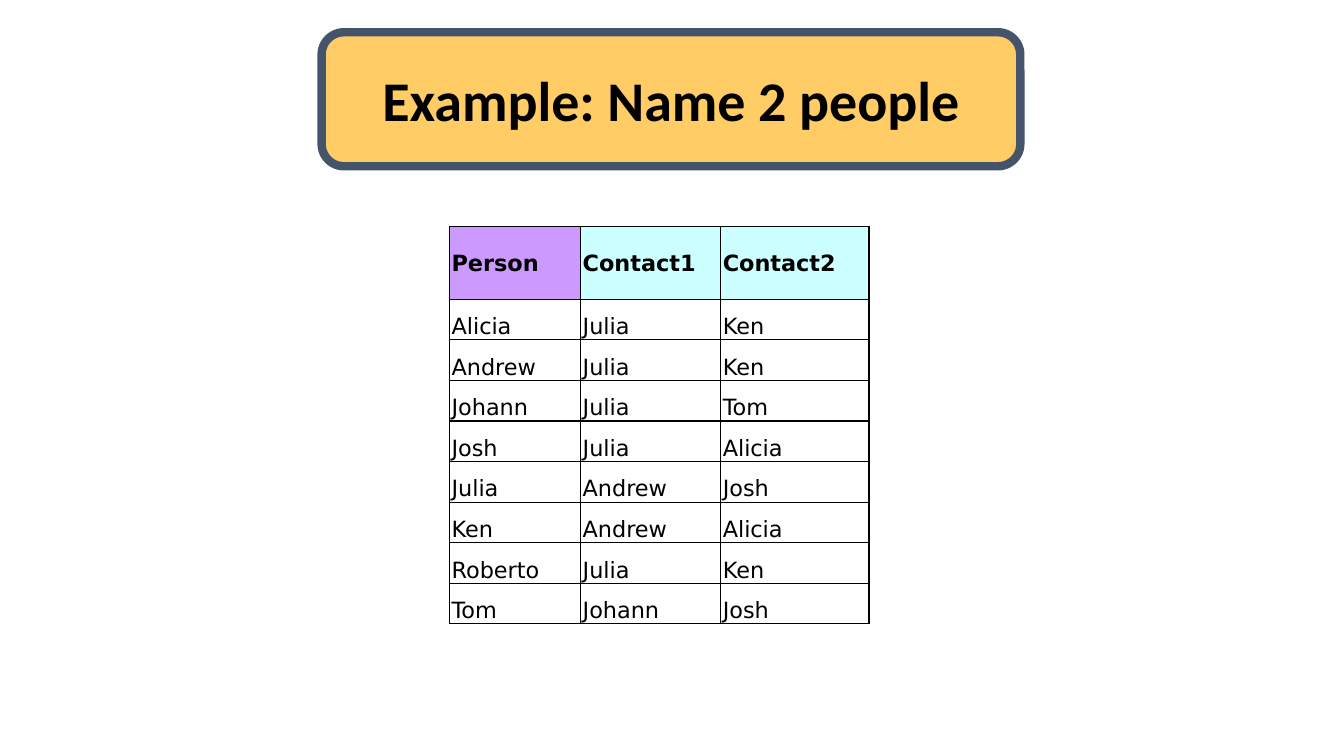
from lxml import etree
from pptx import Presentation
from pptx.dml.color import RGBColor
from pptx.enum import shapes, text
from pptx.oxml import ns
from pptx.util import Inches, Pt

HEADERS = ["Person", "Contact1", "Contact2"]
HEADER_FILLS = ["CC99FF", "CCFFFF", "CCFFFF"]
CONTACTS = [
    ["Alicia", "Julia", "Ken"],
    ["Andrew", "Julia", "Ken"],
    ["Johann", "Julia", "Tom"],
    ["Josh", "Julia", "Alicia"],
    ["Julia", "Andrew", "Josh"],
    ["Ken", "Andrew", "Alicia"],
    ["Roberto", "Julia", "Ken"],
    ["Tom", "Johann", "Josh"],
]
COLUMN_WIDTHS = [1.3, 1.39, 1.47]
TABLE_HEIGHT = 3.94
HEADER_HEIGHT = 0.72
TITLE_BOX = [Inches(value) for value in (3.19, 0.32, 6.93, 1.33)]


def color(hex_string):
    return RGBColor.from_string(hex_string)


def fill_solid(fill, hex_string):
    fill.solid()
    fill.fore_color.rgb = color(hex_string)


def add_run(paragraph, content, size, font_name, bold):
    run = paragraph.add_run()
    run.text = content
    run.font.size = Pt(size)
    run.font.name = font_name
    run.font.bold = bold
    run.font.color.rgb = color("000000")


def add_title_panel(slide):
    panel = slide.shapes.add_shape(shapes.MSO_SHAPE.ROUNDED_RECTANGLE, *TITLE_BOX)
    panel.shadow.inherit = False
    fill_solid(panel.fill, "FFCC66")
    panel.line.color.rgb = color("44546A")
    panel.line.width = Pt(6)
    return panel


def set_title(slide, content):
    panel = add_title_panel(slide)
    title = slide.shapes.title
    title.left, title.top, title.width, title.height = TITLE_BOX
    panel.element.addnext(title.element)
    frame = title.text_frame
    frame.auto_size = text.MSO_AUTO_SIZE.NONE
    frame.word_wrap = False
    frame.vertical_anchor = text.MSO_ANCHOR.MIDDLE
    paragraph = frame.paragraphs[0]
    paragraph.alignment = text.PP_ALIGN.CENTER
    add_run(paragraph, content, 40, "Calibri", True)


def add_borders(cell):
    properties = cell._tc.get_or_add_tcPr()
    for index, side in enumerate(["lnL", "lnR", "lnT", "lnB"]):
        border = etree.Element(ns.qn(f"a:{side}"), w=str(Pt(1)))
        fill = etree.SubElement(border, ns.qn("a:solidFill"))
        etree.SubElement(fill, ns.qn("a:srgbClr"), val="000000")
        properties.insert(index, border)


def format_cell(cell, content, fill, anchor, bold):
    cell.margin_left = cell.margin_right = cell.margin_top = Inches(0.02)
    cell.margin_bottom = 0
    cell.vertical_anchor = anchor
    fill_solid(cell.fill, fill)
    add_borders(cell)
    add_run(cell.text_frame.paragraphs[0], content, 16, "DejaVu Sans", bold)


def add_contact_table(slide):
    table = slide.shapes.add_table(
        len(CONTACTS) + 1, len(HEADERS), Inches(4.46), Inches(2.25),
        Inches(sum(COLUMN_WIDTHS)), Inches(TABLE_HEIGHT)).table
    for column, width in zip(table.columns, COLUMN_WIDTHS):
        column.width = Inches(width)
    for row in table.rows:
        row.height = Inches((TABLE_HEIGHT - HEADER_HEIGHT) / len(CONTACTS))
    table.rows[0].height = Inches(HEADER_HEIGHT)
    for column, (header, fill) in enumerate(zip(HEADERS, HEADER_FILLS)):
        format_cell(table.cell(0, column), header, fill, text.MSO_ANCHOR.MIDDLE, True)
    for row, names in enumerate(CONTACTS, 1):
        for column, name in enumerate(names):
            format_cell(table.cell(row, column), name, "FFFFFF", text.MSO_ANCHOR.BOTTOM, False)


def main():
    presentation = Presentation()
    presentation.slide_width = Inches(13.33)
    presentation.slide_height = Inches(7.5)
    slide = presentation.slides.add_slide(presentation.slide_layouts[5])
    set_title(slide, "Example: Name 2 people")
    add_contact_table(slide)
    presentation.save("out.pptx")


if __name__ == "__main__":
    main()
